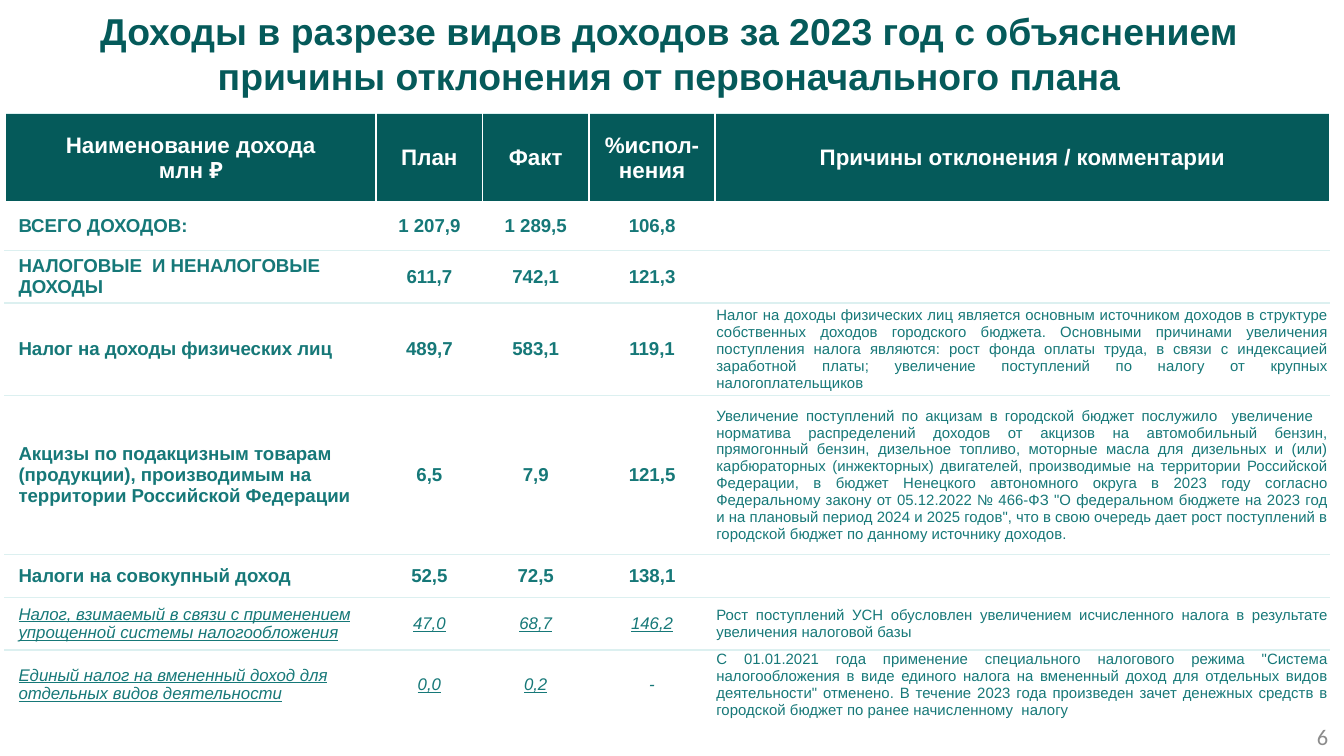
from lxml.etree import SubElement
from pptx import Presentation
from pptx.dml.color import RGBColor
from pptx.enum.text import MSO_ANCHOR, MSO_AUTO_SIZE, PP_ALIGN
from pptx.oxml.ns import qn
from pptx.util import Cm, Pt

COLORS = {
    "header": "055A5A",
    "body": "167878",
    "rule": "DCF0F0",
    "white": "FFFFFF",
    "number": "8C8C8C",
}
TITLE = (
    "Доходы в разрезе видов доходов за 2023 год с объяснением "
    "причины отклонения от первоначального плана"
)
HEADERS = [
    "Наименование дохода\nмлн ₽",
    "План",
    "Факт",
    "%испол-нения",
    "Причины отклонения / комментарии",
]
INCOME_ROWS = [
    ["ВСЕГО ДОХОДОВ:", "1 207,9", "1 289,5", "106,8", ""],
    ["НАЛОГОВЫЕ  И НЕНАЛОГОВЫЕ ДОХОДЫ", "611,7", "742,1", "121,3", ""],
    [
        "Налог на доходы физических лиц", "489,7", "583,1", "119,1",
        "Налог на доходы физических лиц является основным источником доходов "
        "в структуре собственных доходов городского бюджета. Основными "
        "причинами увеличения поступления налога являются: рост фонда оплаты "
        "труда, в связи с индексацией заработной платы; увеличение "
        "поступлений по налогу от крупных налогоплательщиков",
    ],
    [
        "Акцизы по подакцизным товарам (продукции), производимым на "
        "территории Российской Федерации", "6,5", "7,9", "121,5",
        "Увеличение поступлений по акцизам в городской бюджет послужило  "
        "увеличение   норматива распределений доходов от акцизов на "
        "автомобильный бензин, прямогонный бензин, дизельное топливо, "
        "моторные масла для дизельных и (или) карбюраторных (инжекторных) "
        "двигателей, производимые на территории Российской Федерации, в "
        "бюджет Ненецкого автономного округа в 2023 году согласно "
        "Федеральному закону от 05.12.2022 № 466-ФЗ \"О федеральном бюджете "
        "на 2023 год и на плановый период 2024 и 2025 годов\", что в свою "
        "очередь дает рост поступлений в городской бюджет по данному "
        "источнику доходов.",
    ],
    ["Налоги на совокупный доход", "52,5", "72,5", "138,1", ""],
]
TAX_ROWS = [
    [
        "Налог, взимаемый в связи с применением упрощенной системы "
        "налогообложения", "47,0", "68,7", "146,2",
        "Рост поступлений УСН обусловлен увеличением исчисленного налога в "
        "результате увеличения налоговой базы",
    ],
    [
        "Единый налог на вмененный доход для отдельных видов деятельности",
        "0,0", "0,2", "-",
        "С 01.01.2021 года применение специального налогового режима "
        "\"Система налогообложения в виде единого налога на вмененный доход "
        "для отдельных видов деятельности\" отменено. В течение 2023 года "
        "произведен зачет денежных средств в городской бюджет по ранее "
        "начисленному  налогу",
    ],
]
COLUMN_WIDTHS = [7.01, 2.01, 2.01, 2.39, 11.61]
ROW_HEIGHTS = [1.68, 0.91, 0.99, 1.75, 3, 0.79, 0.99, 0.99]
WIDE_INSETS = (0.25, 0.1)
SIDE_INSETS = (0.18, 0)
TIGHT_INSETS = (0.02, 0.02)


def write_text(frame, text, size, color, align=PP_ALIGN.CENTER, font="Arial",
               bold=False, italic=False, underline=False):
    """Fill a text frame with evenly formatted paragraphs, one for each line."""
    frame.word_wrap = True
    for index, line in enumerate(text.split("\n")):
        paragraph = frame.add_paragraph() if index else frame.paragraphs[0]
        paragraph.alignment = align
        run = paragraph.add_run()
        run.text = line
        run.font.name = font
        run.font.size = Pt(size)
        run.font.bold = bold
        run.font.italic = italic
        run.font.underline = underline
        run.font.color.rgb = RGBColor.from_string(COLORS[color])


def set_borders(cell, **edges):
    """Draw one-point cell borders, given as edge tag and colour name."""
    properties = cell._tc.get_or_add_tcPr()
    for position, (edge, color) in enumerate(edges.items()):
        line = SubElement(properties, qn(f"a:{edge}"), w=str(Pt(1)))
        properties.remove(line)
        properties.insert(position, line)
        if color is None:
            SubElement(line, qn("a:noFill"))
        else:
            fill = SubElement(line, qn("a:solidFill"))
            SubElement(fill, qn("a:srgbClr"), val=COLORS[color])


def format_cell(cell, insets, fill=None):
    """Set the insets, vertical centring and fill of a cell."""
    horizontal, vertical = insets
    cell.margin_left = cell.margin_right = Cm(horizontal)
    cell.margin_top = cell.margin_bottom = Cm(vertical)
    cell.vertical_anchor = MSO_ANCHOR.MIDDLE
    if fill:
        cell.fill.solid()
        cell.fill.fore_color.rgb = RGBColor.from_string(COLORS[fill])
    else:
        cell.fill.background()


def fill_header(table):
    """Write the header row."""
    for column, text in enumerate(HEADERS):
        cell = table.cell(0, column)
        format_cell(cell, WIDE_INSETS, fill="header")
        write_text(cell.text_frame, text, 12, "white", bold=True)
        set_borders(cell, lnL="white", lnR="white", lnT="rule", lnB="white")


def fill_row(table, row, values, is_tax):
    """Write one income row, with tax detail rows in underlined italics."""
    top = "white" if row == 1 else "rule"
    bottom = None if row == len(table.rows) - 1 else "rule"
    value_insets = SIDE_INSETS if is_tax else WIDE_INSETS
    insets = [WIDE_INSETS, value_insets, value_insets, TIGHT_INSETS, TIGHT_INSETS]
    alignments = [PP_ALIGN.LEFT] + [PP_ALIGN.CENTER] * 3 + [PP_ALIGN.JUSTIFY]
    for column, text in enumerate(values):
        cell = table.cell(row, column)
        format_cell(cell, insets[column])
        is_comment = column == len(values) - 1
        styled = is_tax and not is_comment
        if text:
            write_text(cell.text_frame, text,
                       8 if is_comment else 9 if is_tax else 10, "body",
                       align=alignments[column],
                       bold=not is_tax and not is_comment, italic=styled,
                       underline=styled and text != "-")
        set_borders(cell, lnL="white", lnR="white", lnT=top, lnB=bottom)


def add_income_table(slide):
    """Add the table of income by kind."""
    shape = slide.shapes.add_table(
        len(ROW_HEIGHTS), len(COLUMN_WIDTHS), Cm(0.1), Cm(2.14),
        Cm(sum(COLUMN_WIDTHS)), Cm(sum(ROW_HEIGHTS)))
    table = shape.table
    table.horz_banding = False
    table.first_row = False
    for column, width in zip(table.columns, COLUMN_WIDTHS):
        column.width = Cm(width)
    for row, height in zip(table.rows, ROW_HEIGHTS):
        row.height = Cm(height)
    fill_header(table)
    for row, values in enumerate(INCOME_ROWS + TAX_ROWS, start=1):
        fill_row(table, row, values, is_tax=row > len(INCOME_ROWS))


def add_title(slide):
    """Place and format the title."""
    title = slide.shapes.title
    title.left, title.top = Cm(0), Cm(0.03)
    title.width, title.height = Cm(25.3), Cm(1.96)
    title.text_frame.auto_size = MSO_AUTO_SIZE.NONE
    title.text_frame.vertical_anchor = MSO_ANCHOR.TOP
    write_text(title.text_frame, TITLE, 20, "header", bold=True)


def add_page_number(slide):
    """Add the page number at the lower right."""
    box = slide.shapes.add_textbox(Cm(19.43), Cm(13.54), Cm(5.92), Cm(0.76))
    box.text_frame.vertical_anchor = MSO_ANCHOR.MIDDLE
    write_text(box.text_frame, "6", 12, "number", align=PP_ALIGN.RIGHT,
               font="Calibri")


def main():
    """Build and save the presentation."""
    presentation = Presentation()
    presentation.slide_width, presentation.slide_height = Cm(25.4), Cm(14.28)
    slide = presentation.slides.add_slide(presentation.slide_layouts[5])
    add_income_table(slide)
    add_title(slide)
    add_page_number(slide)
    presentation.save("out.pptx")


if __name__ == "__main__":
    main()
